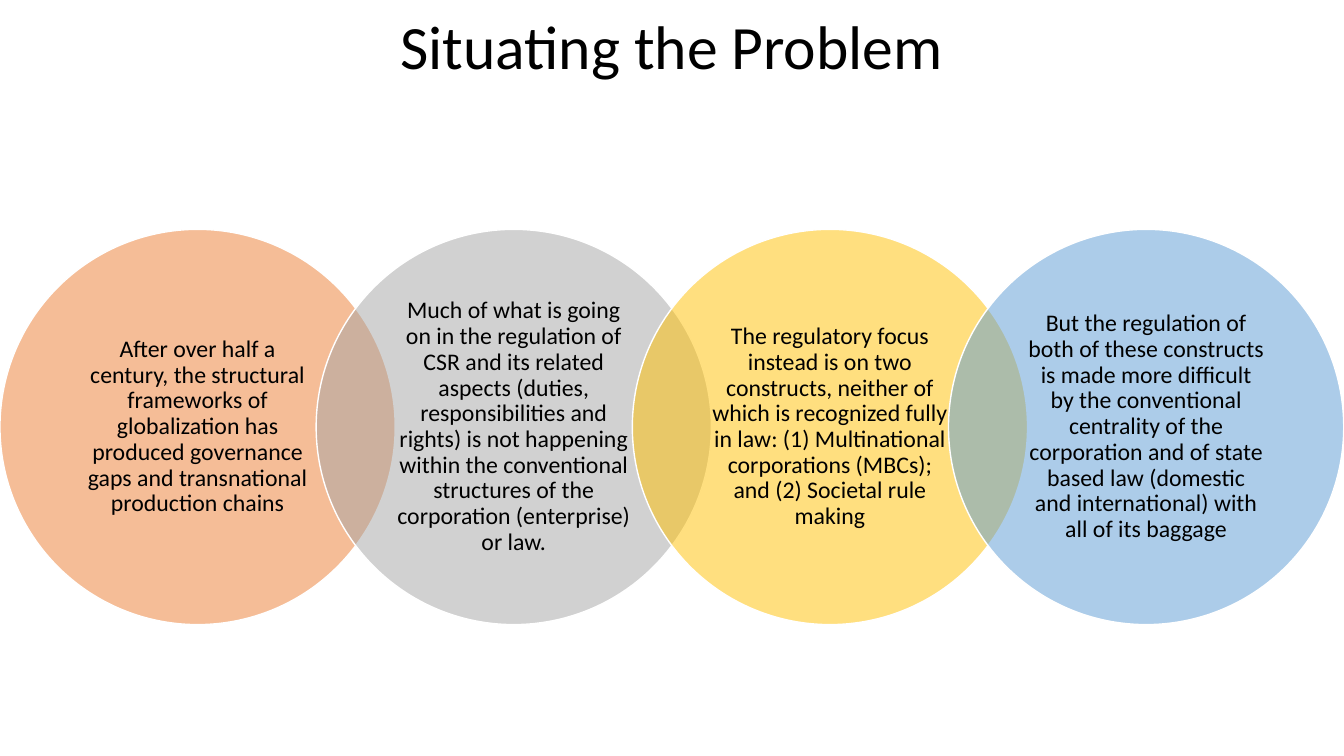
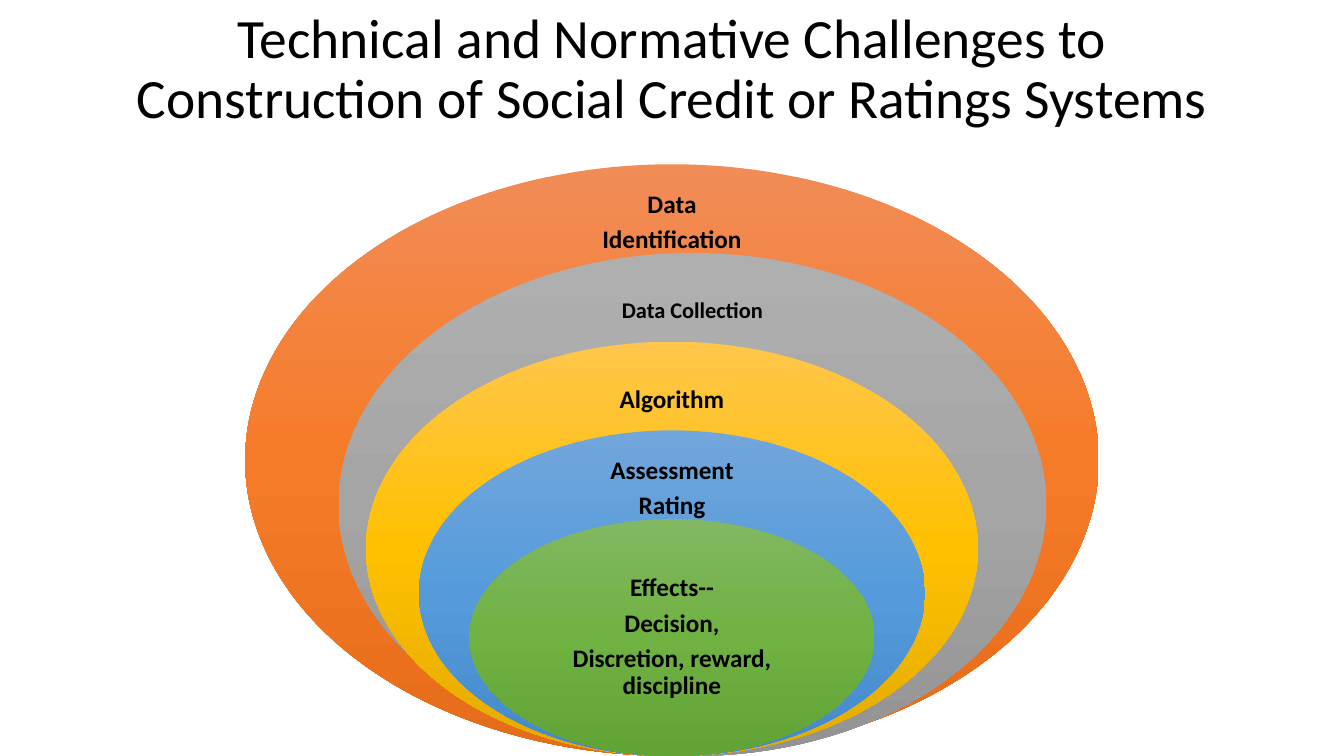
"""Build two slides of ellipse diagrams on regulation and ratings systems."""
from copy import deepcopy

from lxml import etree
from pptx import Presentation
from pptx.dml.color import RGBColor
from pptx.enum.shapes import MSO_SHAPE
from pptx.enum.text import MSO_ANCHOR, PP_ALIGN
from pptx.oxml.ns import qn
from pptx.util import Cm, Pt

ELLIPSE = MSO_SHAPE.OVAL
MIDDLE = MSO_ANCHOR.MIDDLE
CENTER = PP_ALIGN.CENTER

COLORS = {
    "text": "000000",
    "outline": "FFFFFF",
    "orange": "ED7D31",
    "gray": "A5A5A5",
    "gold": "FFC000",
    "blue": "5B9BD5",
}
GRADIENTS = {
    "orange": ("F18C57", "F67B28", "E56C19"),
    "gray": ("AFAFAF", "A5A5A5", "939393"),
    "gold": ("FFC64B", "FFC000", "E3AB00"),
    "blue": ("71A6DB", "559BDB", "448ACA"),
    "green": ("81B861", "6FB242", "62A336"),
}
SLIDE_WIDTH, SLIDE_HEIGHT = 33.87, 19.05
TITLE_LEFT, TITLE_WIDTH = 2.33, 29.21
TITLE_INSETS = (0.25, 0.13)


def add_text(slide, box, lines, insets, size, bold=False, space_after=0):
    text_frame = slide.shapes.add_textbox(*map(Cm, box)).text_frame
    horizontal, vertical = map(Cm, insets)
    frame_format = {
        "word_wrap": True,
        "vertical_anchor": MIDDLE,
        "margin_left": horizontal,
        "margin_right": horizontal,
        "margin_top": vertical,
        "margin_bottom": vertical,
        "text": "\n".join(lines),
    }
    paragraph_format = {
        "alignment": CENTER,
        "line_spacing": 0.9,
        "space_after": Pt(space_after),
    }
    font_format = {"name": "Calibri", "size": Pt(size), "bold": bold}
    for name, value in frame_format.items():
        setattr(text_frame, name, value)
    for paragraph in text_frame.paragraphs:
        for name, value in paragraph_format.items():
            setattr(paragraph, name, value)
        for name, value in font_format.items():
            setattr(paragraph.font, name, value)
        paragraph.font.color.rgb = RGBColor.from_string(COLORS["text"])


def add_ellipse(slide, left, top, width, height):
    shape = slide.shapes.add_shape(ELLIPSE, *map(Cm, (left, top, width, height)))
    shape.shadow.inherit = False
    return shape


presentation = Presentation()
presentation.slide_width = Cm(SLIDE_WIDTH)
presentation.slide_height = Cm(SLIDE_HEIGHT)

titles = [
    ("Situating the Problem", 2.48, 44),
    (
        "Technical and Normative Challenges to Construction of Social Credit or Ratings Systems",
        3.57,
        39.6,
    ),
]
slides = []
for title, height, size in titles:
    slide = presentation.slides.add_slide(presentation.slide_layouts[6])
    add_text(slide, (TITLE_LEFT, 0, TITLE_WIDTH, height), [title], TITLE_INSETS, size)
    slides.append(slide)
problem_slide, challenges_slide = slides

circles = [
    (
        "orange",
        "After over half a century, the structural frameworks of globalization has "
        "produced governance gaps and transnational production chains",
    ),
    (
        "gray",
        "Much of what is going on in the regulation of CSR and its related aspects "
        "(duties, responsibilities and rights) is not happening within the "
        "conventional structures of the corporation (enterprise) or law.",
    ),
    (
        "gold",
        "The regulatory focus instead is on two constructs, neither of which is "
        "recognized fully in law: (1) Multinational corporations (MBCs); and "
        "(2) Societal rule making",
    ),
    (
        "blue",
        "But the regulation of both of these constructs is made more difficult by "
        "the conventional centrality of the corporation and of state based law "
        "(domestic and international) with all of its baggage",
    ),
]
diameter, circle_top, text_inset = 9.96, 5.78, 1.46
text_side = diameter - 2 * text_inset
for index, (color, statement) in enumerate(circles):
    left = index * 0.8 * diameter
    shape = add_ellipse(problem_slide, left, circle_top, diameter, diameter)
    shape.fill.solid()
    shape.fill.fore_color.rgb = RGBColor.from_string(COLORS[color])
    color_element = shape.element.spPr.find(qn("a:solidFill"))[0]
    etree.SubElement(color_element, qn("a:alpha"), val="50000")
    shape.line.color.rgb = RGBColor.from_string(COLORS["outline"])
    shape.line.width = Pt(1)
    text_box = (left + text_inset, circle_top + text_inset, text_side, text_side)
    add_text(problem_slide, text_box, [statement], (0.54, 0.05), 17, space_after=6)

middle = SLIDE_WIDTH / 2
layers = [
    ("orange", middle, 21.51, 8.05, 18, ["Data", "Identification"]),
    ("gray", 17.45, 17.83, 7.7, 16, ["Data Collection"]),
    ("gold", middle, 15.42, 7.98, 18, ["Algorithm"]),
    ("blue", middle, 12.75, 6.88, 18, ["Assessment", "Rating"]),
    ("green", middle, 10.21, 7.21, 18, ["Effects--", "Decision,", "Discretion, reward, discipline"]),
]
outer_height, inner_height = 14.91, 5.97
layer_step = (outer_height - inner_height) / (len(layers) - 1)
for index, (color, center, width, text_width, size, lines) in enumerate(layers):
    height = outer_height - index * layer_step
    top = SLIDE_HEIGHT - height
    shape = add_ellipse(challenges_slide, center - width / 2, top, width, height)
    shape.line.fill.background()
    shape.fill.gradient()
    shape.fill.gradient_angle = 270
    stop_list = shape.element.spPr.find(qn("a:gradFill")).find(qn("a:gsLst"))
    stop_list.append(deepcopy(stop_list[0]))
    for stop, position, stop_color in zip(shape.fill.gradient_stops, (0, 0.5, 1), GRADIENTS[color]):
        stop.position = position
        stop.color.rgb = RGBColor.from_string(stop_color)
    innermost = index == len(layers) - 1
    text_offset, text_height = (1.5, 2.97) if innermost else (0.74, 1.47)
    text_box = (center - text_width / 2, top + text_offset, text_width, text_height)
    add_text(challenges_slide, text_box, lines, (0.36, 0.36), size, bold=True, space_after=6)

presentation.save("out.pptx")
